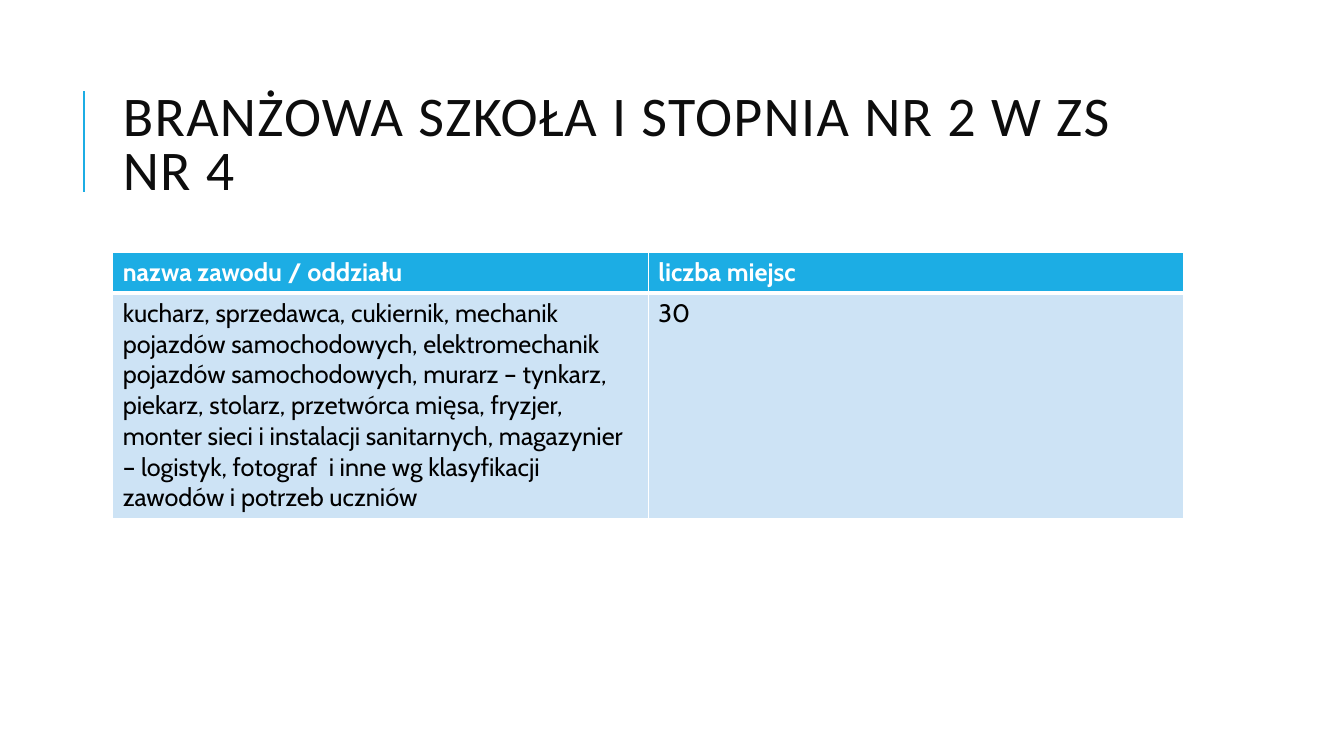
from lxml.etree import SubElement
from pptx import Presentation
from pptx.dml.color import RGBColor as Rgb
from pptx.enum.shapes import MSO_CONNECTOR as Link
from pptx.enum.text import MSO_ANCHOR as Anchor, MSO_AUTO_SIZE as Fit, PP_ALIGN as Align
from pptx.oxml.ns import qn
from pptx.util import Cm, Pt

BLUE = Rgb(0x1C, 0xAD, 0xE4)
PALE = Rgb(0xCD, 0xE3, 0xF5)
WHITE = Rgb(0xFF, 0xFF, 0xFF)
BLACK = Rgb(0, 0, 0)
INK = Rgb(0x0D, 0x0D, 0x0D)

TITLE = "BRANŻOWA SZKOŁA I STOPNIA NR 2 W ZS NR 4"
ROWS = [
    ("nazwa zawodu / oddziału", "liczba miejsc"),
    ("kucharz, sprzedawca, cukiernik, mechanik pojazdów samochodowych, "
     "elektromechanik pojazdów samochodowych, murarz – tynkarz, piekarz, "
     "stolarz, przetwórca mięsa, fryzjer, monter sieci i instalacji "
     "sanitarnych, magazynier – logistyk, fotograf  i inne wg klasyfikacji "
     "zawodów i potrzeb uczniów", "30"),
]


def add_run(para, text, face, size, color, bold=False):
    run = para.add_run()
    run.text = text
    font = run.font
    font.name, font.size, font.bold = face, Pt(size), bold
    font.color.rgb = color
    return run


def add_rule(slide, left, top, height):
    rule = slide.shapes.add_connector(Link.STRAIGHT, left, top + height, left, top)
    rule.line.color.rgb = BLUE
    rule.line.width = Pt(1.5)
    SubElement(rule._element.spPr, qn("a:effectLst"))


def add_title(slide, left, top, width, height):
    title = slide.shapes.title
    title.left, title.top, title.width, title.height = left, top, width, height
    frame = title.text_frame
    frame.word_wrap = True
    frame.auto_size = Fit.NONE
    frame.vertical_anchor = Anchor.MIDDLE
    para = frame.paragraphs[0]
    para.alignment = Align.LEFT
    para.line_spacing = 0.8
    run = add_run(para, TITLE, "Calibri", 40, INK)
    run.font._element.set("spc", "100")
    add_rule(slide, left - Cm(0.73), top + Cm(0.66), Cm(2.54))


def add_edges(cell, widths):
    """Draw white borders; widths maps a side letter to points."""
    props = cell._tc.get_or_add_tcPr()
    for side, width in widths.items():
        edge = SubElement(props, qn(f"a:ln{side}"), w=str(Pt(width)))
        fill = SubElement(edge, qn("a:solidFill"))
        SubElement(fill, qn("a:srgbClr"), val=str(WHITE))


def add_places(slide, left, top, width, height):
    head = Cm(1.03)
    table = slide.shapes.add_table(len(ROWS), 2, left, top, width, height).table
    table.rows[0].height = head
    table.rows[1].height = height - head
    for r, row in enumerate(ROWS):
        first = r == 0
        for c, text in enumerate(row):
            cell = table.cell(r, c)
            add_edges(cell, {"L": 1, "R": 1, "T": 1 if first else 3,
                             "B": 3 if first else 1})
            cell.fill.solid()
            cell.fill.fore_color.rgb = BLUE if first else PALE
            add_run(cell.text_frame.paragraphs[0], text, "Cabin", 18,
                    WHITE if first else BLACK, first)


def main():
    deck = Presentation()
    deck.slide_width, deck.slide_height = Cm(33.87), Cm(19.05)
    slide = deck.slides.add_slide(deck.slide_layouts[5])
    left, width = Cm(2.84), Cm(27)
    add_title(slide, left, Cm(1.63), width, Cm(4.17))
    add_places(slide, left, Cm(6.35), width, Cm(6.63))
    deck.save("out.pptx")


if __name__ == "__main__":
    main()
